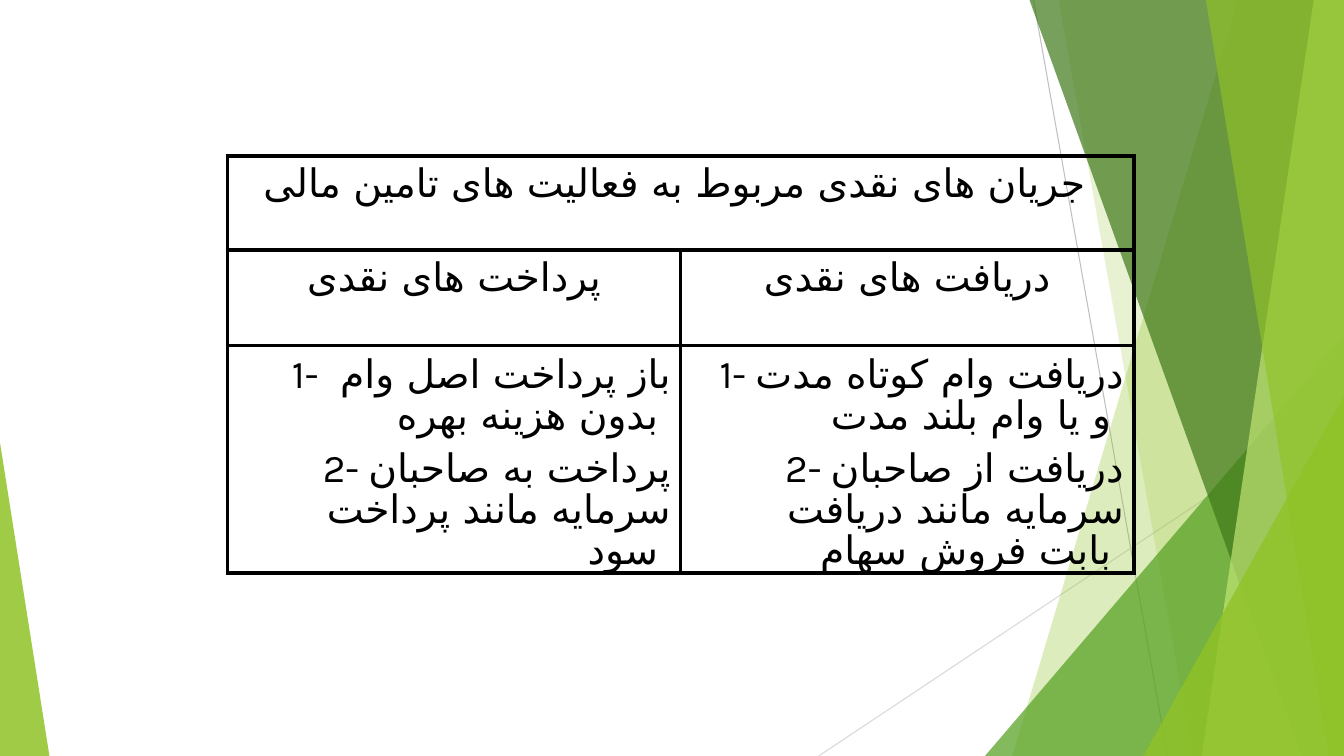
"""Build a slide with a table of financing cash flows on a faceted green backdrop."""
import dataclasses

import lxml.etree
import pptx
import pptx.dml.color
import pptx.enum.shapes
import pptx.enum.text
import pptx.oxml.ns
import pptx.util

WIDTH = pptx.util.Inches(13.33)
HEIGHT = pptx.util.Inches(7.5)
FONT = "Karla"
ARABIC_FONT = "DejaVu Sans"
ALIGN = pptx.enum.text.PP_ALIGN
COLOURS = {
    "ink": "000000",
    "ray": "BFBFBF",
    "pale ray": "D9D9D9",
    "lime": "90C226",
    "green": "54A021",
    "forest": "3F7819",
    "mist": "C0E474",
}


@dataclasses.dataclass
class Ray:
    """A thin line, in percent of the slide."""
    start: tuple[float, float]
    end: tuple[float, float]
    colour: str


@dataclasses.dataclass
class Band:
    """A full-height facet reaching the right edge, in percent of the slide."""
    top: float
    bottom: float
    colour: str
    opacity: int


@dataclasses.dataclass
class Wedge:
    """A right triangle standing on the bottom edge, in percent of the slide."""
    left: float
    top: float
    width: float
    apex: float
    colour: str
    opacity: int


@dataclasses.dataclass
class Row:
    """A table row: its height in percent of the slide and the paragraphs of each cell."""
    height: float
    cells: list[list[str]]
    is_list: bool = False


RAYS = [
    Ray((76.9, 0), (86.87, 100), "ray"),
    Ray((100, 53.73), (60.92, 100), "pale ray"),
]
FACETS = [
    Band(92.12, 75.32, "lime", 30),
    Band(78.77, 88.75, "lime", 20),
    Wedge(73.29, 44.4, 26.71, 1, "green", 72),
    Band(76.6, 96.85, "forest", 70),
    Band(97.75, 89.42, "mist", 70),
    Band(89.72, 98.87, "lime", 65),
    Wedge(85.07, 52.4, 14.93, 1, "lime", 80),
    Wedge(0, 58.53, 3.68, 0, "lime", 85),
]
TABLE_LEFT, TABLE_TOP, TABLE_WIDTH = 16.92, 20.63, 67.44
ROWS = [
    Row(12.4, [["جريان های نقدی مربوط به فعاليت های تامین مالی "], [""]]),
    Row(12.67, [["پرداخت های نقدی"], ["دريافت های نقدی"]]),
    Row(30, [
        ["1- باز پرداخت اصل وام  بدون هزينه بهره ",
         "2- پرداخت به صاحبان سرمايه مانند پرداخت سود "],
        ["1- دريافت وام كوتاه مدت و يا وام بلند مدت ",
         "2- دريافت از صاحبان سرمايه مانند دريافت بابت فروش سهام "],
    ], is_list=True),
]


def across(percent: float) -> int:
    """Turn a share of the slide width into a length."""
    return round(WIDTH * percent / 100)


def down(percent: float) -> int:
    """Turn a share of the slide height into a length."""
    return round(HEIGHT * percent / 100)


def rgb(name: str) -> pptx.dml.color.RGBColor:
    """Look up a named colour."""
    return pptx.dml.color.RGBColor.from_string(COLOURS[name])


def add_element(parent, tag: str, **attributes: str):
    """Append a DrawingML element to a parent."""
    return lxml.etree.SubElement(parent, pptx.oxml.ns.qn(tag), attributes)


def draw_ray(page, ray: Ray) -> None:
    """Draw one thin line."""
    line = page.shapes.add_connector(
        pptx.enum.shapes.MSO_CONNECTOR.STRAIGHT,
        across(ray.start[0]), down(ray.start[1]), across(ray.end[0]), down(ray.end[1]))
    line.line.color.rgb = rgb(ray.colour)
    line.line.width = pptx.util.Pt(0.75)
    add_element(line._element.spPr, "a:effectLst")


def draw_facet(page, facet: Band | Wedge) -> None:
    """Draw one translucent band or wedge."""
    if isinstance(facet, Band):
        builder = page.shapes.build_freeform(across(facet.top), 0)
        builder.add_line_segments(
            [(WIDTH, 0), (WIDTH, HEIGHT), (across(facet.bottom), HEIGHT)], close=True)
        shape = builder.convert_to_shape()
    else:
        shape = page.shapes.add_shape(
            pptx.enum.shapes.MSO_SHAPE.ISOSCELES_TRIANGLE, across(facet.left),
            down(facet.top), across(facet.width), down(100 - facet.top))
        shape.adjustments[0] = facet.apex
    shape.shadow.inherit = False
    shape.line.fill.background()
    shape.fill.solid()
    shape.fill.fore_color.rgb = rgb(facet.colour)
    colour = shape._element.spPr.find(".//" + pptx.oxml.ns.qn("a:srgbClr"))
    add_element(colour, "a:alpha", val=str(facet.opacity * 1000))


def set_borders(cell) -> None:
    """Outline a cell on all four sides."""
    properties = cell._tc.get_or_add_tcPr()
    for tag in ("a:lnL", "a:lnR", "a:lnT", "a:lnB"):
        border = add_element(properties, tag, w=str(pptx.util.Pt(3)))
        fill = add_element(border, "a:solidFill")
        add_element(fill, "a:srgbClr", val=COLOURS["ink"])


def fill_cell(cell, texts: list[str], is_list: bool) -> None:
    """Write and format the paragraphs of one cell."""
    set_borders(cell)
    cell.fill.background()
    cell.text_frame.text = "\n".join(texts)
    if is_list:
        cell.margin_top = pptx.util.Inches(0.1)
        cell.margin_bottom = 0
    for index, para in enumerate(cell.text_frame.paragraphs):
        para.alignment = ALIGN.RIGHT if is_list else ALIGN.CENTER
        if is_list:
            indent = pptx.util.Inches(0.58)
            properties = para._p.get_or_add_pPr()
            properties.set("marL", str(indent))
            properties.set("indent", str(-indent))
            para.line_spacing = 0.9
        if index:
            para.space_before = pptx.util.Pt(8)
        for span in para.runs:
            span.font.name = FONT
            span.font.size = pptx.util.Pt(28)
            span.font.color.rgb = rgb("ink")
            add_element(span._r.get_or_add_rPr(), "a:cs", typeface=ARABIC_FONT)


def draw_table(page) -> None:
    """Draw the cash flow table."""
    frame = page.shapes.add_table(
        len(ROWS), 2, across(TABLE_LEFT), down(TABLE_TOP), across(TABLE_WIDTH),
        down(sum(row.height for row in ROWS)))
    table = frame.table
    table.first_row = False
    table.horz_banding = False
    for index, row in enumerate(ROWS):
        table.rows[index].height = down(row.height)
        for column, texts in enumerate(row.cells):
            fill_cell(table.cell(index, column), texts, row.is_list)
    table.cell(0, 0).merge(table.cell(0, 1))


def main() -> None:
    """Build and save the deck."""
    deck = pptx.Presentation()
    deck.slide_width = WIDTH
    deck.slide_height = HEIGHT
    page = deck.slides.add_slide(deck.slide_layouts[6])
    for ray in RAYS:
        draw_ray(page, ray)
    for facet in FACETS:
        draw_facet(page, facet)
    draw_table(page)
    deck.save("out.pptx")


if __name__ == "__main__":
    main()
